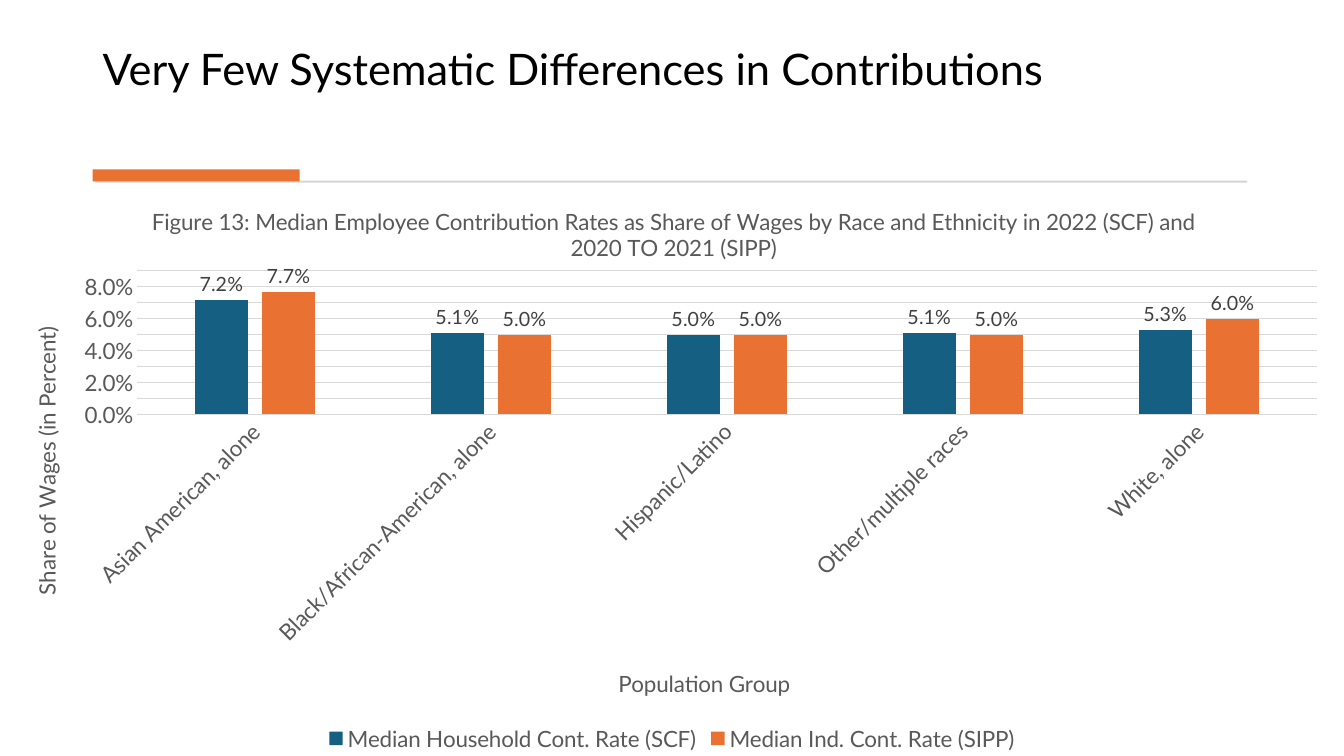
from lxml.etree import SubElement, fromstring
from pptx import Presentation
from pptx.chart.data import CategoryChartData
from pptx.dml.color import RGBColor
from pptx.enum.chart import (XL_CHART_TYPE, XL_LABEL_POSITION,
                             XL_LEGEND_POSITION, XL_TICK_MARK)
from pptx.enum.shapes import MSO_SHAPE
from pptx.enum.text import MSO_ANCHOR
from pptx.oxml.ns import nsdecls, qn
from pptx.util import Inches, Pt

WIDTH, HEIGHT = Inches(13.33), Inches(7.5)
FONT = "Lato"
COLORS = {"title": "000000", "rule": "D5D5D5", "accent": "E97132",
          "household": "156082", "text": "595959", "label": "404040",
          "grid": "D9D9D9"}

GROUPS = ["Asian American, alone", "Black/African-American, alone",
          "Hispanic/Latino", "Other/multiple races", "White, alone"]
RATES = [
    ("Median Household Cont. Rate (SCF)", "household",
     [0.072, 0.051, 0.05, 0.051, 0.053]),
    ("Median Ind. Cont. Rate (SIPP)", "accent",
     [0.077, 0.05, 0.05, 0.05, 0.06]),
]
FIGURE_TITLE = ("Figure 13: Median Employee Contribution Rates as Share of Wages "
                "by Race and Ethnicity in 2022 (SCF) and 2020 TO 2021 (SIPP)")


def rgb(name):
    return RGBColor.from_string(COLORS[name])


def box(x, y, w, h):
    """Turn shares of the slide into lengths."""
    return int(x * WIDTH), int(y * HEIGHT), int(w * WIDTH), int(h * HEIGHT)


def style_font(font, size=16, color="text"):
    font.name, font.size, font.bold = FONT, Pt(size), False
    font.color.rgb = rgb(color)


def write(tf, text, **style):
    p = tf.paragraphs[0]
    r = p.add_run()
    r.text = text
    style_font(r.font, **style)
    return p


def add_heading(s, text, place):
    tf = s.shapes.add_textbox(*box(*place)).text_frame
    tf.word_wrap = True
    tf.vertical_anchor = MSO_ANCHOR.BOTTOM
    write(tf, text, size=31, color="title").line_spacing = 0.9


def add_bar(s, color, place):
    sp = s.shapes.add_shape(MSO_SHAPE.RECTANGLE, *box(*place))
    sp.shadow.inherit = False
    sp.fill.solid()
    sp.fill.fore_color.rgb = rgb(color)
    sp.line.fill.background()


def set_layout(element, index, **shares):
    """Fix a chart part at shares of the chart's size."""
    for old in element.findall(qn("c:layout")):
        element.remove(old)
    layout = fromstring(f"<c:layout {nsdecls('c')}/>")
    manual = SubElement(layout, qn("c:manualLayout"))
    if "w" in shares:
        SubElement(manual, qn("c:layoutTarget")).set("val", "inner")
    for key in ("x", "y"):
        SubElement(manual, qn(f"c:{key}Mode")).set("val", "edge")
    for key, share in shares.items():
        SubElement(manual, qn(f"c:{key}")).set("val", str(share))
    element.insert(index, layout)


def add_title(owner, title, text, x, y):
    owner.has_title = True
    write(title.text_frame, text)
    set_layout(title.text_frame._txBody.getparent().getparent(), 1, x=x, y=y)


def style_line(line, color="grid"):
    line.color.rgb = rgb(color)
    line.width = Pt(0.75)


def style_axes(chart):
    groups, wages = chart.category_axis, chart.value_axis
    for axis in (groups, wages):
        axis.major_tick_mark = axis.minor_tick_mark = XL_TICK_MARK.NONE
        style_font(axis.tick_labels.font)

    groups.has_major_gridlines = False
    style_line(groups.format.line)
    groups._element.find(qn("c:txPr")).find(qn("a:bodyPr")).set("rot", "-2700000")

    wages.minimum_scale, wages.maximum_scale, wages.major_unit = 0, 0.09, 0.01
    wages.tick_labels.number_format = "0.0%"
    wages.tick_labels.number_format_is_linked = False
    wages.format.line.fill.background()
    style_line(wages.major_gridlines.format.line)

    add_title(groups, groups.axis_title, "Population Group", 0.457, 0.84)
    add_title(wages, wages.axis_title, "Share of Wages (in Percent)", 0.02, 0.246)
    body = wages.axis_title.text_frame._txBody.find(qn("a:bodyPr"))
    body.set("rot", "-5400000")
    body.set("vert", "horz")


def style_series(series, color):
    series.format.fill.solid()
    series.format.fill.fore_color.rgb = rgb(color)
    labels = series.data_labels
    labels.show_value = True
    labels.position = XL_LABEL_POSITION.OUTSIDE_END
    labels.number_format, labels.number_format_is_linked = "0.0%", False
    style_font(labels.font, size=14, color="label")


def add_rates_chart(s, place):
    data = CategoryChartData(number_format="0.0%")
    data.categories = GROUPS
    for name, _, values in RATES:
        data.add_series(name, values)
    chart = s.shapes.add_chart(XL_CHART_TYPE.COLUMN_CLUSTERED,
                               *box(*place), data).chart
    style_font(chart.font, size=10, color="title")
    add_title(chart, chart.chart_title, FIGURE_TITLE, 0.11, 0.036)

    # Columns
    plot = chart.plots[0]
    plot.gap_width, plot.overlap, plot.vary_by_categories = 219, -27, False
    for series, (_, color, _) in zip(plot.series, RATES):
        style_series(series, color)
    set_layout(chart._chartSpace.chart.plotArea, 0,
               x=0.102, y=0.157, w=0.878, h=0.249)

    # Axes and legend
    style_axes(chart)
    chart.has_legend = True
    chart.legend.position = XL_LEGEND_POSITION.BOTTOM
    chart.legend.include_in_layout = False
    style_font(chart.legend.font)


def main():
    prs = Presentation()
    prs.slide_width, prs.slide_height = WIDTH, HEIGHT
    s = prs.slides.add_slide(prs.slide_layouts[6])

    # Heading with its rule and accent
    add_heading(s, "Very Few Systematic Differences in Contributions",
                (0.069, 0.037, 0.86, 0.095))
    add_bar(s, "rule", (0.071, 0.239, 0.857, 0.0025))
    add_bar(s, "accent", (0.069, 0.224, 0.154, 0.016))

    # Contribution rates
    add_rates_chart(s, (0, 0.239, 1, 0.761))
    prs.save("out.pptx")


if __name__ == "__main__":
    main()
